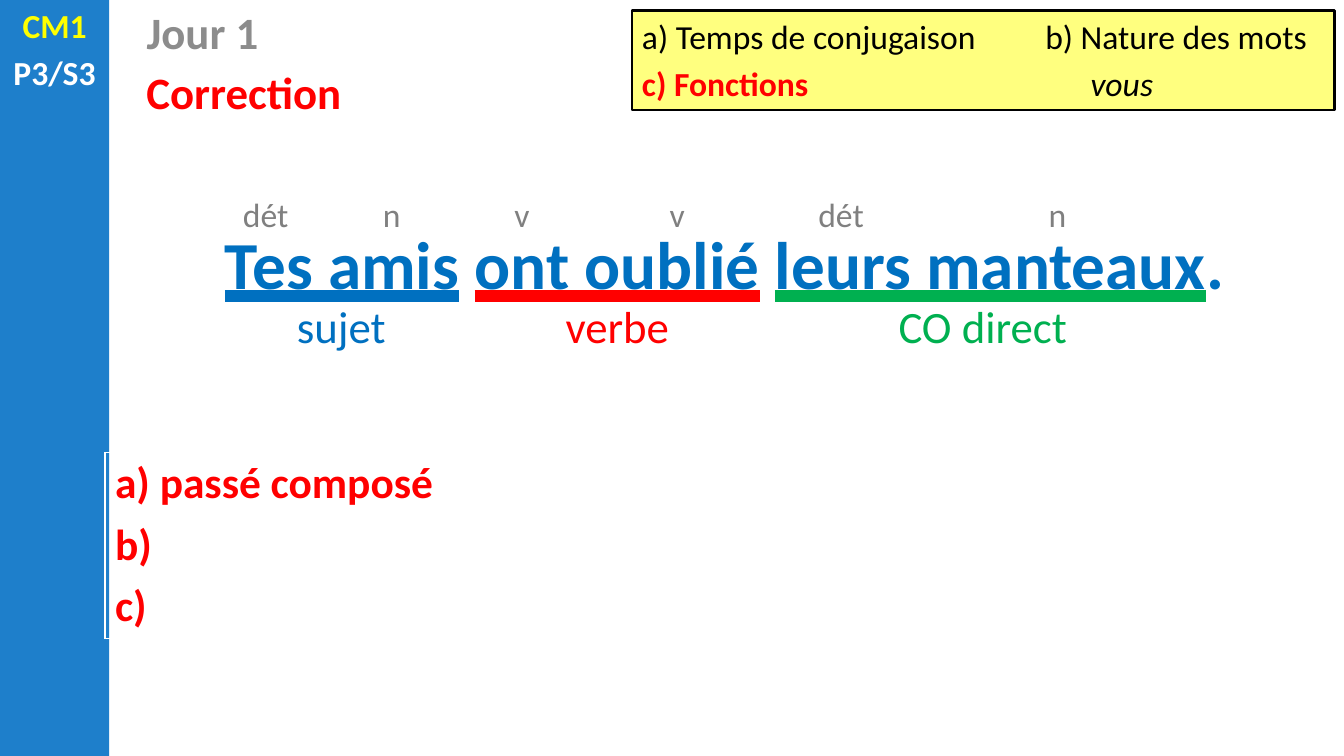
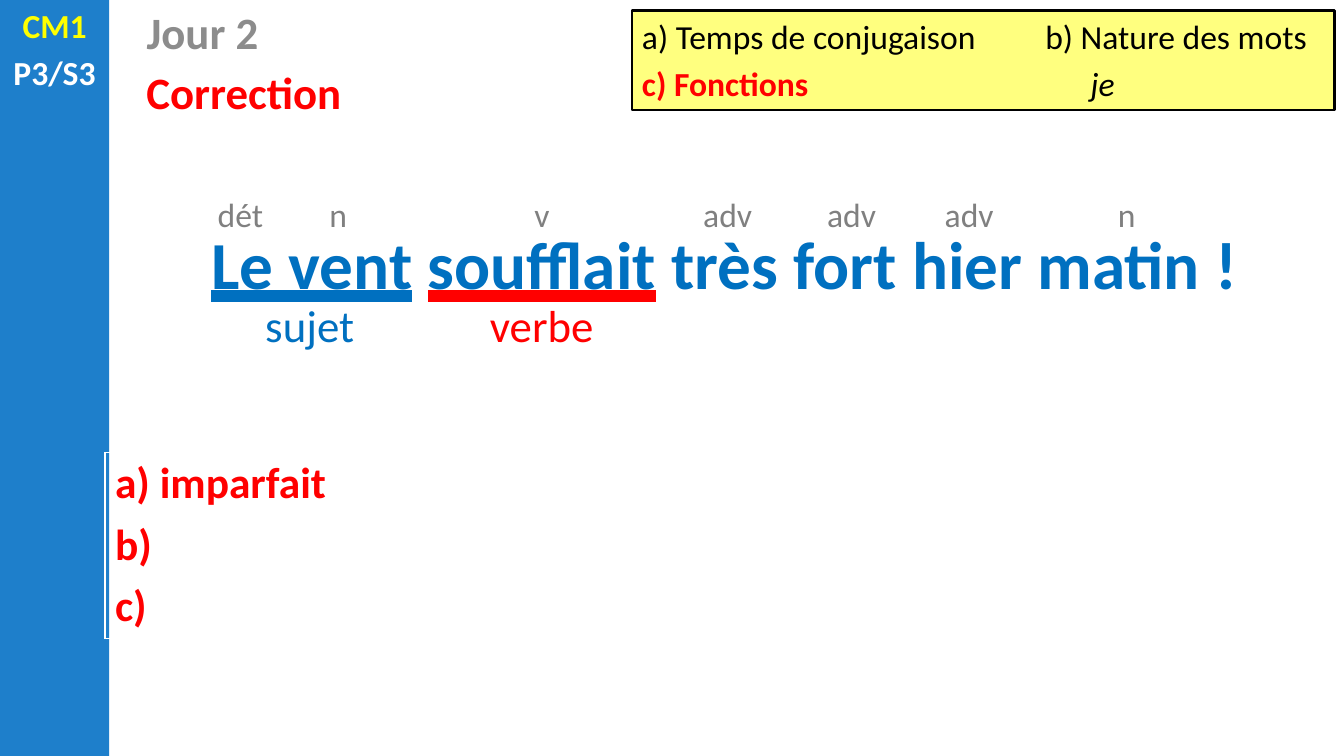
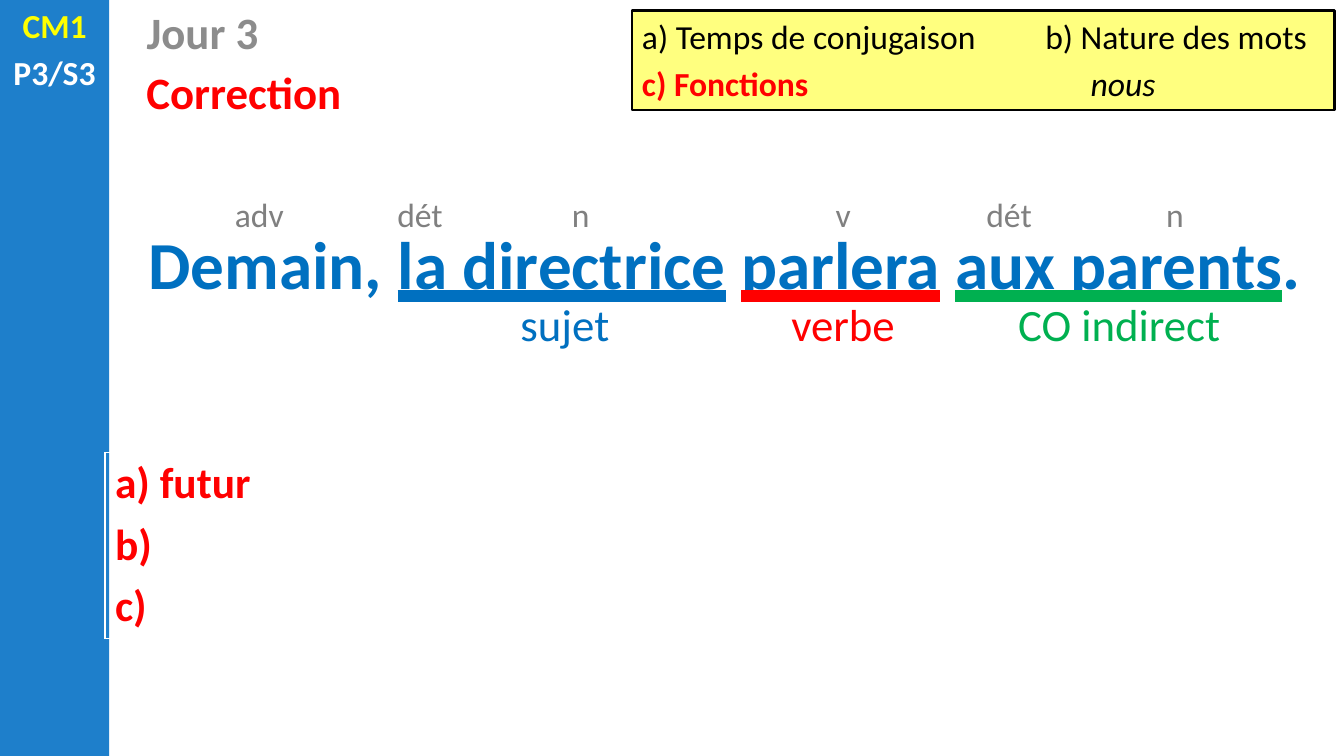
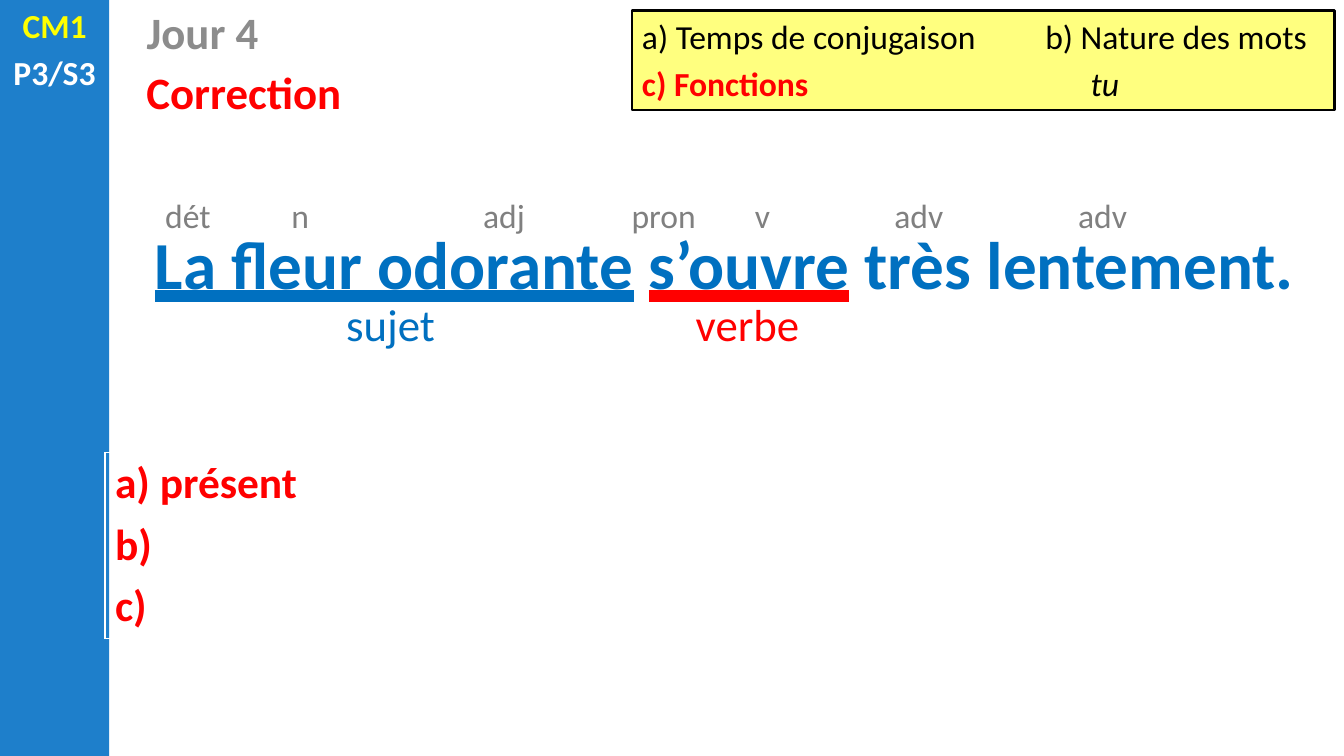
import pptx
import pptx.dml.color
import pptx.enum.shapes
import pptx.enum.text
import pptx.oxml.ns
import pptx.util
import lxml.etree

Pt = pptx.util.Pt
ALIGN = pptx.enum.text.PP_ALIGN
TITLE_ONLY = 5
COLUMNS, ROWS = 128, 72  # square cells covering the whole slide

BLUE, RED, GREEN, GREY = "0070C0", "FF0000", "00B050", "808080"
BLACK, WHITE, YELLOW = "000000", "FFFFFF", "FFFF00"
BAND, DAY_GREY = "1E7FCB", "8C8C8C"

# Grammatical function: colour and label width in columns
ROLES = {
    "sujet": (BLUE, 11.9),
    "verbe": (RED, 11.9),
    "CO direct": (GREEN, 21.9),
    "CO indirect": (GREEN, 22.6),
}

# Sentence parts carry their function; tags and roles carry their centre column
DAYS = [
    {
        "tense": "passé composé", "pronoun": "vous", "tag_row": 18, "role_row": 28,
        "sentence": [("Tes amis", "sujet"), (" ", None), ("ont oublié", "verbe"),
                     (" ", None), ("leurs manteaux", "CO direct"), (".", None)],
        "tags": [("dét", 25.3), ("n", 37.3), ("v", 49.7), ("v", 64.5),
                 ("dét", 80.1), ("n", 100.7)],
        "roles": [("sujet", 32.5), ("verbe", 58.8), ("CO direct", 93.6)],
    },
    {
        "tense": "imparfait", "pronoun": "je", "tag_row": 18, "role_row": 27.9,
        "sentence": [("Le vent", "sujet"), (" ", None), ("soufflait", "verbe"),
                     (" très fort hier matin !", None)],
        "tags": [("dét", 22.9), ("n", 32.2), ("v", 51.6), ("adv", 69.3),
                 ("adv", 81.1), ("adv", 92.3), ("n", 107.3)],
        "roles": [("sujet", 29.5), ("verbe", 51.6)],
    },
    {
        "tense": "futur", "pronoun": "nous", "tag_row": 18, "role_row": 27.8,
        "sentence": [("Demain, ", None), ("la directrice", "sujet"), (" ", None),
                     ("parlera", "verbe"), (" ", None),
                     ("aux parents", "CO indirect"), (".", None)],
        "tags": [("adv", 24.7), ("dét", 40), ("n", 55.3), ("v", 80.3),
                 ("dét", 96.1), ("n", 111.9)],
        "roles": [("sujet", 53.8), ("verbe", 80.3), ("CO indirect", 106.6)],
    },
    {
        "tense": "présent", "pronoun": "tu", "tag_row": 18.1, "role_row": 27.8,
        "sentence": [("La fleur odorante", "sujet"), (" ", None), ("s’ouvre", "verbe"),
                     (" très lentement.", None)],
        "tags": [("dét", 17.9), ("n", 28.6), ("adj", 48), ("pron", 63.2),
                 ("v", 72.6), ("adv", 87.5), ("adv", 105)],
        "roles": [("sujet", 37.2), ("verbe", 71.2)],
    },
]


def rgb(value):
    return pptx.dml.color.RGBColor.from_string(value)


def add_xml(parent, tag, **attributes):
    return lxml.etree.SubElement(parent, pptx.oxml.ns.qn(tag), **attributes)


def find_xml(shape, tag):
    return list(shape.element.iter(pptx.oxml.ns.qn(tag)))


class Lesson:
    """Holds the deck's style and the slide being filled."""

    FONT = "Calibri"

    def __init__(self):
        self.deck = pptx.Presentation()
        self.deck.slide_width = pptx.util.Inches(13.33)
        self.deck.slide_height = pptx.util.Inches(7.5)
        self.layout = self.deck.slide_layouts[TITLE_ONLY]
        self.slide = None

    def grid(self, left, top, width, height):
        column = self.deck.slide_width / COLUMNS
        row = self.deck.slide_height / ROWS
        return [round(n) for n in (left * column, top * row, width * column, height * row)]

    def start(self, heading):
        self.slide = self.deck.slides.add_slide(self.layout)
        title = self.slide.shapes.title
        title.left, title.top, title.width, title.height = self.grid(13, 0, 76, 6.1)
        self.fill_frame(title.text_frame, [[(heading, {})]],
                        size=32, color=DAY_GREY, bold=True)

    def fill_frame(self, frame, paragraphs, **style):
        frame.word_wrap = True
        frame.auto_size = pptx.enum.text.MSO_AUTO_SIZE.NONE
        frame.vertical_anchor = pptx.enum.text.MSO_ANCHOR.TOP
        self.fill_paragraphs(frame, paragraphs, **style)

    def fill_paragraphs(self, frame, paragraphs, size, align=ALIGN.LEFT, gap=0.2, **base):
        """Each paragraph is a list of (text, format) runs."""
        for number, runs in enumerate(paragraphs):
            paragraph = frame.add_paragraph() if number else frame.paragraphs[0]
            paragraph.alignment = align
            if number:
                paragraph.space_before = Pt(round(gap * size, 1))
            for text, extra in runs:
                run = paragraph.add_run()
                run.text = text
                self.style_font(run.font,
                                {"name": self.FONT, "size": Pt(size), **base, **extra})

    def style_font(self, font, values):
        font.color.rgb = rgb(values.pop("color"))
        for attribute, value in values.items():
            setattr(font, attribute, value)

    def text(self, place, paragraphs, **style):
        box = self.slide.shapes.add_textbox(*self.grid(*place))
        self.fill_frame(box.text_frame, paragraphs, **style)
        return box

    def centred(self, text, middle, row, width, height, **style):
        place = (middle - width / 2, row, width, height)
        return self.text(place, [[(text, {})]], align=ALIGN.CENTER, **style)

    def rectangle(self, place, fill, line=None):
        shape = self.slide.shapes.add_shape(
            pptx.enum.shapes.MSO_SHAPE.RECTANGLE, *self.grid(*place))
        shape.shadow.inherit = False
        shape.fill.solid()
        shape.fill.fore_color.rgb = rgb(fill)
        if line:
            shape.line.color.rgb = rgb(line)
            shape.line.width = Pt(1.5)
        else:
            shape.line.fill.background()
        return shape

    def sidebar(self):
        """Build the band once and keep it in the shared layout."""
        band = self.rectangle((0, 0, 10.4, ROWS), BAND)
        level = self.text((0, 0, 10.4, 9.5),
                          [[("CM1", {"color": YELLOW})], [("P3/S3", {"color": WHITE})]],
                          size=24, align=ALIGN.CENTER, bold=True)
        for part in (band, level):
            self.layout.shapes.element.append(part.element)

    def instructions(self, pronoun):
        panel = self.rectangle((60.2, 1, 66.9, 9.5), YELLOW, BLACK)
        add_xml(find_xml(panel, "a:srgbClr")[0], "a:alpha", val="50000")
        self.fill_frame(panel.text_frame, [
            [("a) Temps de conjugaison\tb) Nature des mots", {})],
            [("c) Fonctions\t", {"color": RED, "bold": True}),
             (pronoun, {"italic": True})],
        ], size=24, color=BLACK)
        # One tab stop per line aligns the right-hand part
        for properties, inches in zip(find_xml(panel, "a:pPr"), (4, 4.45)):
            stops = add_xml(properties, "a:tabLst")
            add_xml(stops, "a:tab", pos=str(pptx.util.Inches(inches)), algn="l")

    def sentence(self, parts):
        heavy = pptx.enum.text.MSO_UNDERLINE.HEAVY_LINE
        runs = [(text, {"underline": heavy if role else False}) for text, role in parts]
        box = self.text((10, 20.7, 118, 8.7), [runs], size=48, align=ALIGN.CENTER,
                        color=BLUE, bold=True)
        # Underline takes the colour of the function
        for fill, (_, role) in zip(find_xml(box, "a:solidFill"), parts):
            if role:
                underline = lxml.etree.Element(pptx.oxml.ns.qn("a:uFill"))
                add_xml(add_xml(underline, "a:solidFill"), "a:srgbClr", val=ROLES[role][0])
                fill.addnext(underline)

    def answers(self, tense):
        table = self.slide.shapes.add_table(1, 1, *self.grid(10, 43.1, 118, 17.5)).table
        table.first_row = table.horz_banding = False
        cell = table.cell(0, 0)
        cell.fill.background()
        lines = [f"a) {tense}", "b)", "c)"]
        self.fill_paragraphs(cell.text_frame, [[(line, {})] for line in lines],
                             size=31, gap=6 / 31, color=RED, bold=True)


def main():
    lesson = Lesson()
    for number, day in enumerate(DAYS, 1):
        lesson.start(f"Jour {number}")
        if number == 1:
            lesson.sidebar()
        lesson.sentence(day["sentence"])
        lesson.text((13, 5.7, 46.4, 6.1), [[("Correction", {})]],
                    size=32, color=RED, bold=True)
        lesson.instructions(day["pronoun"])
        lesson.answers(day["tense"])
        # Word classes above the sentence, functions below it
        for tag, middle in day["tags"]:
            lesson.centred(tag, middle, day["tag_row"], 8.6, 4.8, size=24, color=GREY)
        for role, middle in day["roles"]:
            color, width = ROLES[role]
            lesson.centred(role, middle, day["role_row"], width, 6.1, size=32, color=color)
    lesson.deck.save("out.pptx")


if __name__ == "__main__":
    main()
